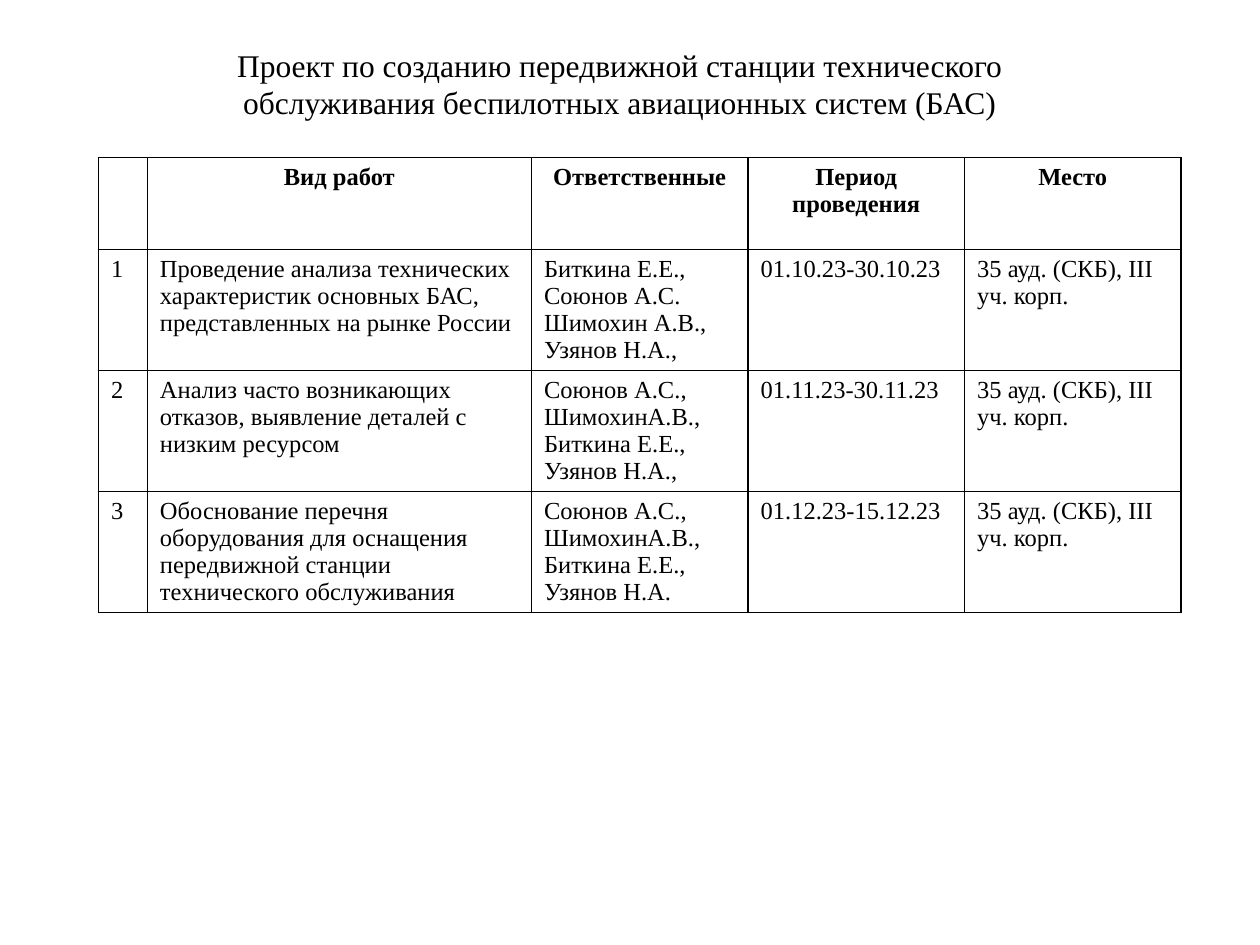
from lxml.etree import SubElement
from pptx import Presentation
from pptx.dml.color import RGBColor
from pptx.enum.text import PP_ALIGN as Align
from pptx.oxml.ns import qn
from pptx.util import Pt

BLACK = RGBColor(0x00, 0x00, 0x00)
WHITE = RGBColor(0xFF, 0xFF, 0xFF)
FONT = "Times New Roman"


def write_text(frame, text, size=14, bold=False, align=Align.LEFT):
    """Fill a text frame, one paragraph per line of text."""
    frame.word_wrap = True
    for number, line in enumerate(text.split("\n")):
        para = frame.add_paragraph() if number else frame.paragraphs[0]
        para.alignment = align
        span = para.add_run()
        span.text = line
        span.font.name = FONT
        span.font.size = Pt(size)
        span.font.bold = bold
        span.font.color.rgb = BLACK


def add_borders(cell):
    """Draw a thin black line on each side of a cell."""
    properties = cell._tc.get_or_add_tcPr()
    for position, side in enumerate(("a:lnL", "a:lnR", "a:lnT", "a:lnB")):
        line = properties.makeelement(qn(side), {"w": str(Pt(1))})
        properties.insert(position, line)
        fill = SubElement(line, qn("a:solidFill"))
        SubElement(fill, qn("a:srgbClr"), val=str(BLACK))


deck = Presentation()
deck.slide_width, deck.slide_height = Pt(720), Pt(540)
page = deck.slides.add_slide(deck.slide_layouts[6])

# Work plan table
PLACE = "35 ауд. (СКБ), III уч. корп."
TEAM = "Союнов А.С., ШимохинА.В., Биткина Е.Е.,\nУзянов Н.А."
ROWS = [
    ("", "Вид работ", "Ответственные", "Период проведения", "Место"),
    ("1", "Проведение анализа технических характеристик основных БАС, "
     "представленных на рынке России",
     "Биткина Е.Е., Союнов А.С. Шимохин А.В., Узянов Н.А.,",
     "01.10.23-30.10.23", PLACE),
    ("2", "Анализ часто возникающих отказов, выявление деталей с низким ресурсом",
     TEAM + ",", "01.11.23-30.11.23", PLACE),
    ("3", "Обоснование перечня оборудования для оснащения передвижной станции "
     "технического обслуживания",
     TEAM, "01.12.23-15.12.23", PLACE),
]
COLUMN_WIDTHS = [28, 219.5, 123.75, 123.75, 123.75]
ROW_HEIGHT = 52.5

table = page.shapes.add_table(
    len(ROWS), len(COLUMN_WIDTHS), Pt(56.25), Pt(90),
    Pt(sum(COLUMN_WIDTHS)), Pt(ROW_HEIGHT * len(ROWS))).table
for column, width in zip(table.columns, COLUMN_WIDTHS):
    column.width = Pt(width)

for row_number, texts in enumerate(ROWS):
    header = row_number == 0
    table.rows[row_number].height = Pt(ROW_HEIGHT)
    for column_number, text in enumerate(texts):
        cell = table.cell(row_number, column_number)
        cell.fill.solid()
        cell.fill.fore_color.rgb = WHITE
        add_borders(cell)
        if text:
            write_text(cell.text_frame, text, bold=header,
                       align=Align.CENTER if header else Align.LEFT)

# Title
title_box = page.shapes.add_textbox(Pt(78.5), Pt(22.5), Pt(551.5), Pt(51))
write_text(title_box.text_frame,
           "Проект по созданию передвижной станции технического "
           "обслуживания беспилотных авиационных систем (БАС)",
           size=18, align=Align.CENTER)

deck.save("out.pptx")
